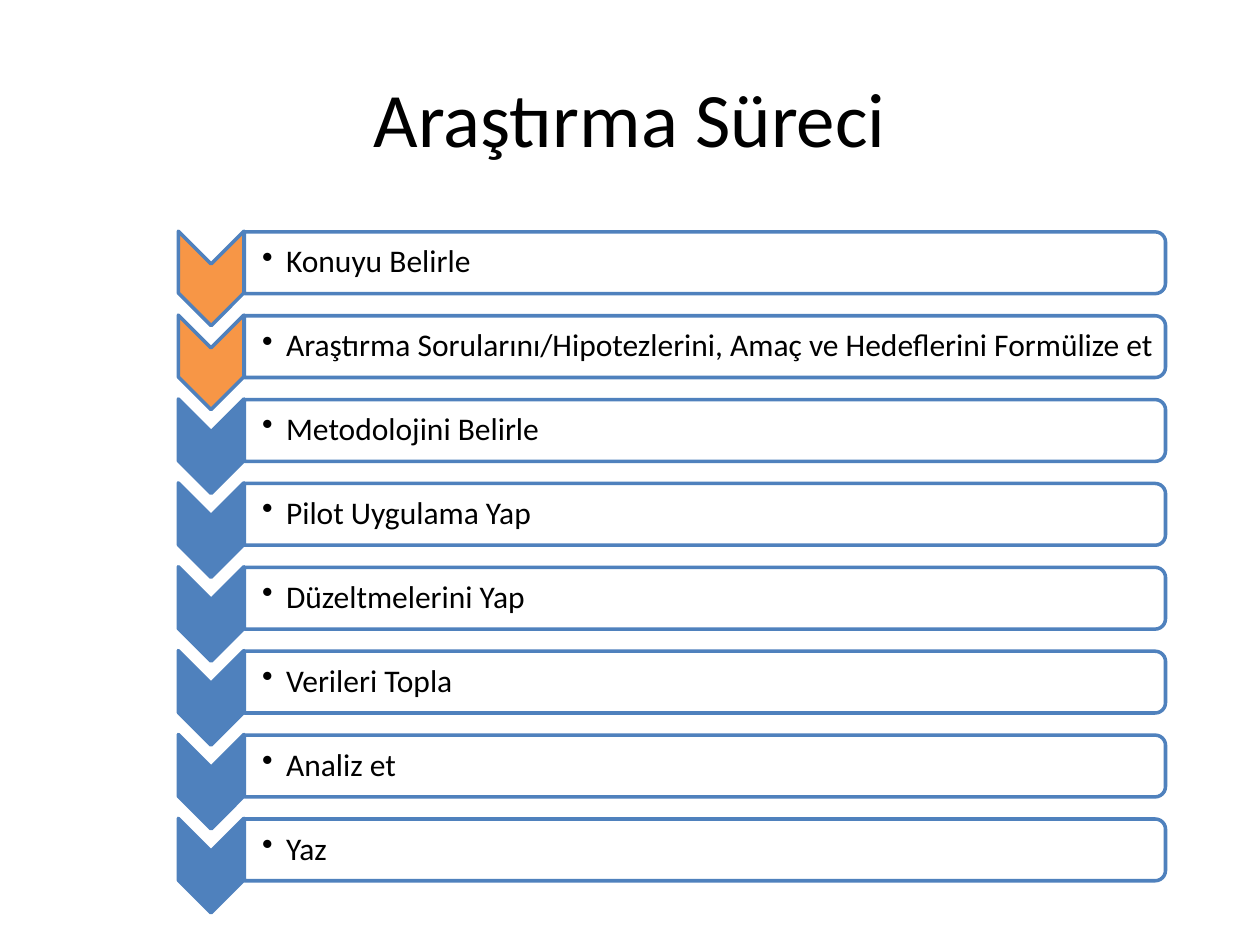
from lxml import etree
from pptx import Presentation
from pptx import util as u
from pptx.dml.color import RGBColor
from pptx.enum import shapes, text
from pptx.oxml import ns

BLACK = RGBColor(0x00, 0x00, 0x00)
WHITE = RGBColor(0xFF, 0xFF, 0xFF)
BLUE = RGBColor(0x4F, 0x81, 0xBD)
ORANGE = RGBColor(0xF7, 0x96, 0x46)

STEPS = [
    "Konuyu Belirle",
    "Araştırma Sorularını/Hipotezlerini, Amaç ve Hedeflerini Formülize et",
    "Metodolojini Belirle",
    "Pilot Uygulama Yap",
    "Düzeltmelerini Yap",
    "Verileri Topla",
    "Analiz et",
    "Yaz",
]
HIGHLIGHTED_STEPS = 2
FIRST_CENTER = 2.085
PITCH = 4.66 / 7


def write_text(frame, content, *, size, align, font="Calibri", color=BLACK, bullet=None):
    frame.word_wrap = True
    frame.vertical_anchor = text.MSO_ANCHOR.MIDDLE
    paragraph = frame.paragraphs[0]
    paragraph.alignment = align
    run = paragraph.add_run()
    run.text = content
    run.font.size = u.Pt(size)
    run.font.name = font
    run.font.color.rgb = color
    if bullet:
        paragraph.level = 1
        paragraph.line_spacing = 0.9
        paragraph.space_after = u.Pt(2.7)
        properties = paragraph._p.get_or_add_pPr()
        properties.set("marL", str(u.Inches(0.19)))
        properties.set("indent", str(u.Inches(-0.19)))
        etree.SubElement(properties, ns.qn("a:buChar"), char=bullet)


class ProcessSlide:
    line_color = BLUE
    line_width = u.Pt(2)

    def __init__(self, presentation):
        self.slide = presentation.slides.add_slide(presentation.slide_layouts[5])
        self.group = None

    def title(self, content):
        title = self.slide.shapes.title
        title.left, title.top = u.Inches(0.5), u.Inches(0.3)
        title.width, title.height = u.Inches(9), u.Inches(1.25)
        write_text(title.text_frame, content, size=44, align=text.PP_ALIGN.CENTER)

    def start_list(self):
        self.group = self.slide.shapes.add_group_shape()

    def turned_shape(self, kind, center_x, center_y, width, height, fill):
        shape = self.group.shapes.add_shape(
            kind,
            u.Inches(center_x - width / 2),
            u.Inches(center_y - height / 2),
            u.Inches(width),
            u.Inches(height),
        )
        shape.rotation = 90
        shape.shadow.inherit = False
        shape.fill.solid()
        shape.fill.fore_color.rgb = fill
        shape.line.color.rgb = self.line_color
        shape.line.width = self.line_width
        return shape

    def chevron(self, center_y, fill):
        self.turned_shape(shapes.MSO_SHAPE.CHEVRON, 1.675, center_y, 0.75, 0.52, fill)

    def bar(self, center_y):
        bar = self.turned_shape(
            shapes.MSO_SHAPE.ROUND_2_SAME_RECTANGLE, 5.595, center_y, 0.49, 7.31, WHITE
        )
        color = bar._element.spPr.find(ns.qn("a:solidFill"))[0]
        etree.SubElement(color, ns.qn("a:alpha"), val="90000")

    def label(self, center_y, content):
        box = self.group.shapes.add_textbox(
            u.Inches(1.94), u.Inches(center_y - 0.22), u.Inches(7.29), u.Inches(0.44)
        )
        frame = box.text_frame
        frame.margin_left = u.Inches(0.14)
        frame.margin_top = frame.margin_right = frame.margin_bottom = u.Inches(0.01)
        write_text(frame, content, size=18, align=text.PP_ALIGN.LEFT, bullet="•")

    def step(self, index, content):
        center_y = FIRST_CENTER + index * PITCH
        self.chevron(center_y + 0.125, ORANGE if index < HIGHLIGHTED_STEPS else BLUE)
        self.bar(center_y)
        self.label(center_y, content)


def main():
    presentation = Presentation()
    presentation.slide_width = u.Inches(10)
    presentation.slide_height = u.Inches(7.5)
    process = ProcessSlide(presentation)
    process.title("Araştırma Süreci")
    process.start_list()
    for index, content in enumerate(STEPS):
        process.step(index, content)
    presentation.save("out.pptx")


if __name__ == "__main__":
    main()
